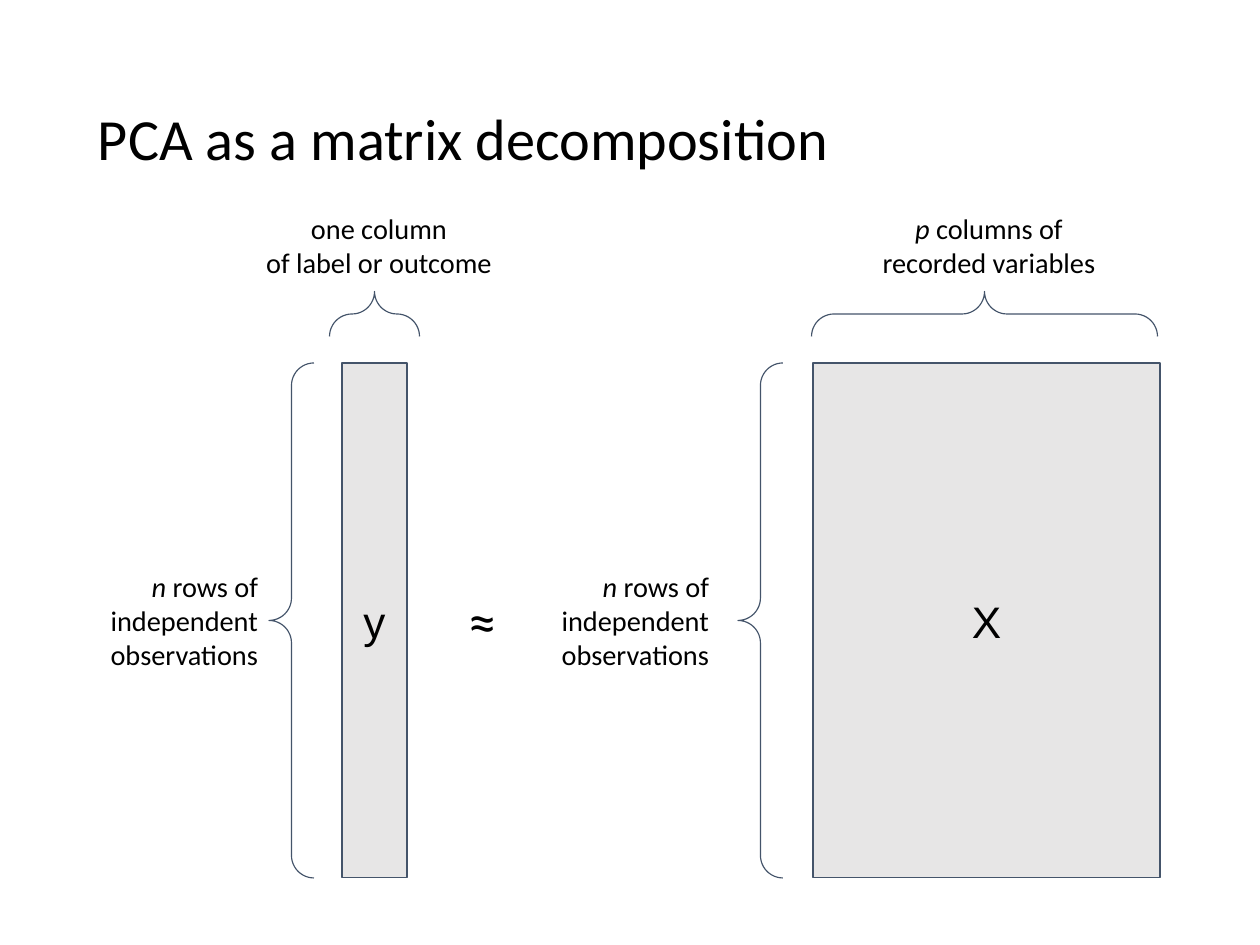
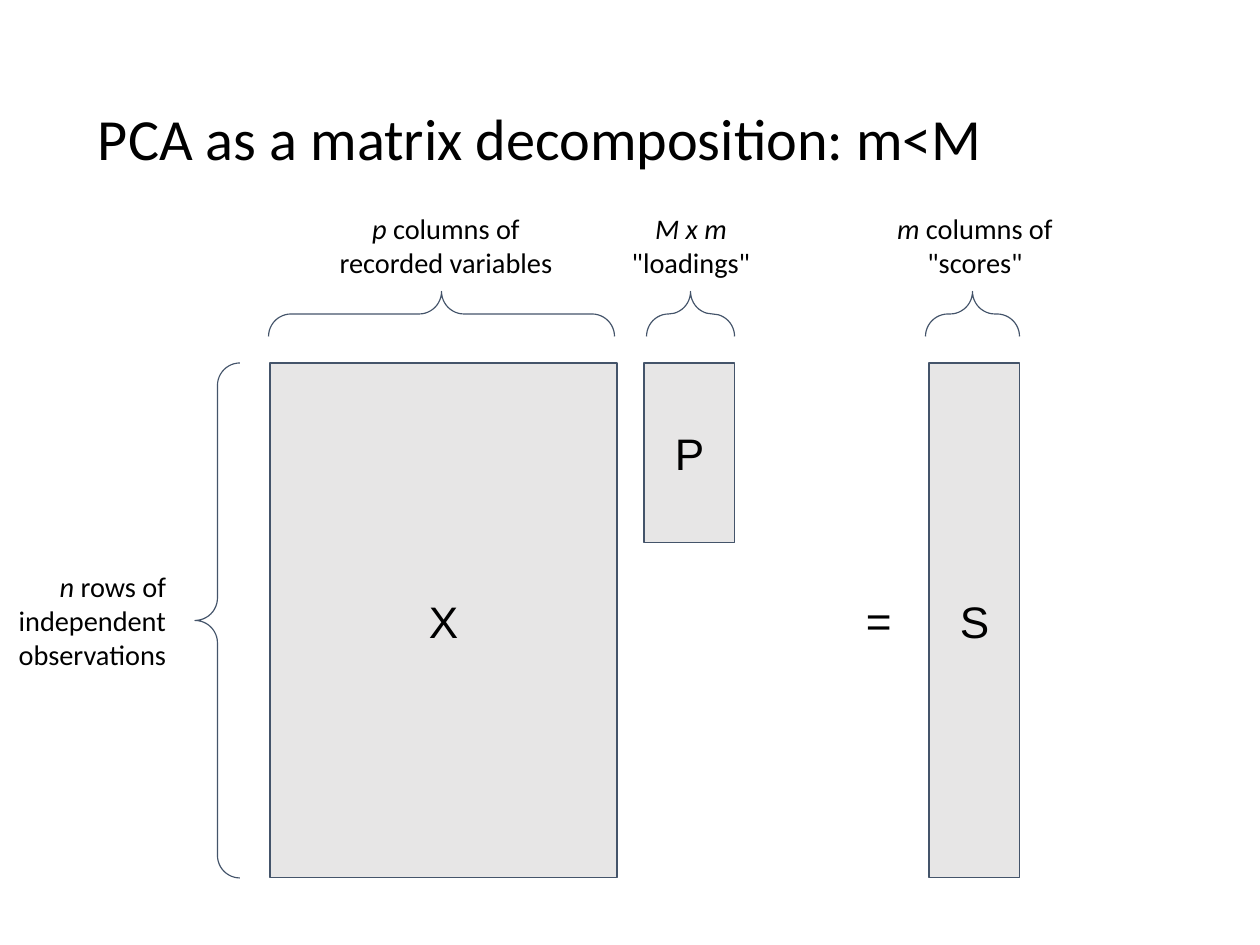
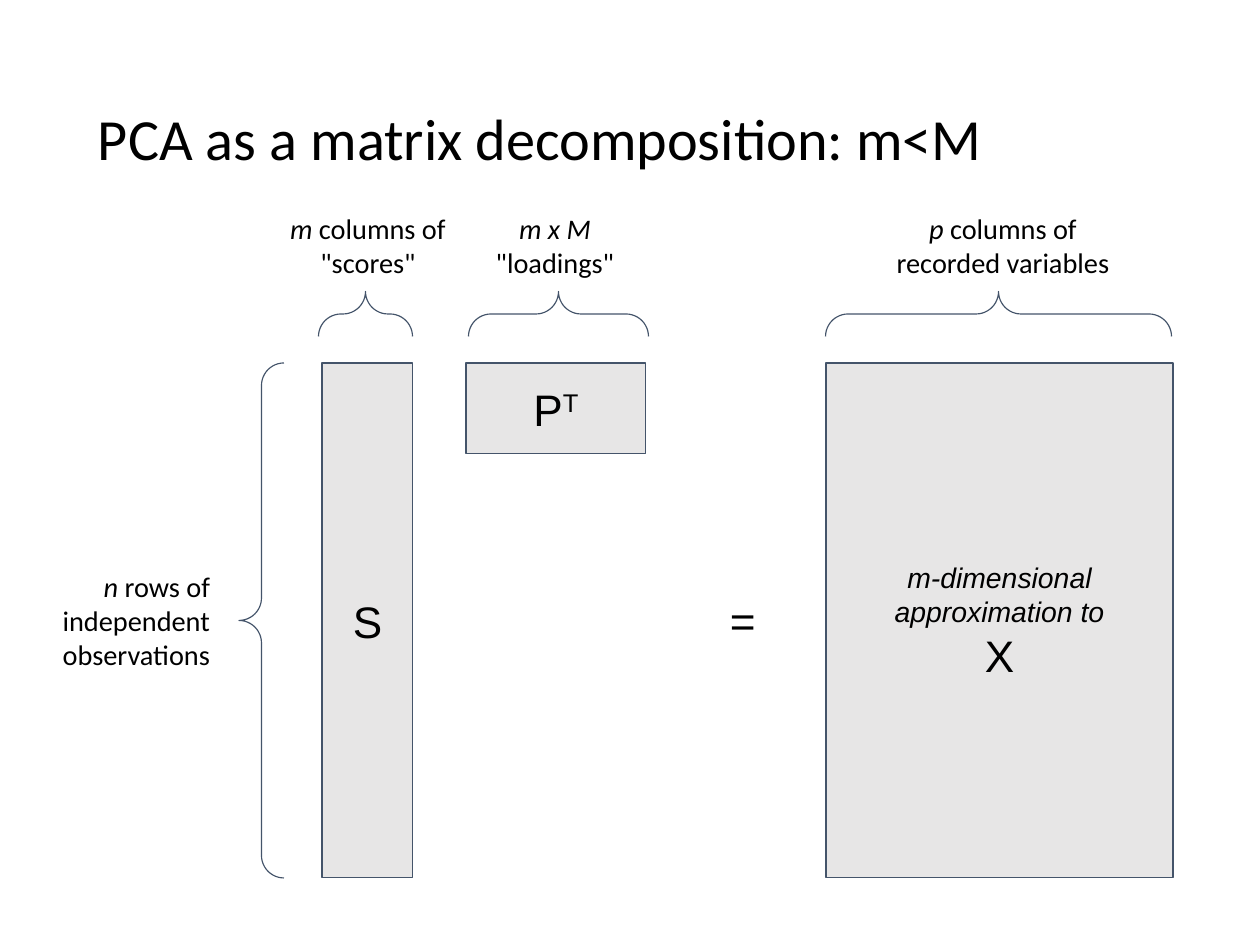
"""Build three slides that show PCA as a matrix decomposition."""
from collections import namedtuple

from pptx import Presentation
from pptx.dml.color import RGBColor
from pptx.enum.shapes import MSO_SHAPE as Shape
from pptx.enum.text import MSO_ANCHOR as Anchor, MSO_AUTO_SIZE as AutoSize, PP_ALIGN as Align
from pptx.util import Pt

PX = 8064
BLACK = RGBColor(0x00, 0x00, 0x00)
GREY = RGBColor(0xE7, 0xE6, 0xE6)
SLATE = RGBColor(0x44, 0x54, 0x6A)

INSET = 11
MATRIX_TOP, ROWS, VARIABLES = 363, 515, 347
SCORES, LOADINGS = 91, 180
BRACE_DEPTH, COLUMN_BRACE_TOP = 45, 291

Run = namedtuple("Run", "text size italic raised", defaults=(18, False, False))
Matrix = namedtuple("Matrix", "left width height lines")
RowNote = namedtuple("RowNote", "left brace_left")
ColumnNote = namedtuple("ColumnNote", "left brace_left brace_width lines")
Relation = namedtuple("Relation", "left top width height run font align wrap inset_y")
Page = namedtuple("Page", "title matrices row_notes column_notes relations")


def write(frame, lines, font, align, inset_x=INSET, inset_y=INSET):
    frame.margin_left = frame.margin_right = inset_x * PX
    frame.margin_top = frame.margin_bottom = inset_y * PX
    for number, line in enumerate(lines):
        paragraph = frame.add_paragraph() if number else frame.paragraphs[0]
        paragraph.alignment = align
        for part in line:
            run = paragraph.add_run()
            run.text = part.text
            run.font.name = font
            run.font.size = Pt(part.size)
            run.font.italic = part.italic
            run.font.color.rgb = BLACK
            if part.raised:
                run._r.get_or_add_rPr().set("baseline", "30000")


def add_outlined(slide, kind, left, top, width, height):
    outlined = slide.shapes.add_shape(kind, left * PX, top * PX, width * PX, height * PX)
    outlined.shadow.inherit = False
    outlined.line.color.rgb = SLATE
    outlined.line.width = Pt(0.75)
    if kind == Shape.LEFT_BRACE:
        outlined.fill.background()
        outlined.adjustments[0] = outlined.adjustments[1] = 0.5
    else:
        outlined.fill.solid()
        outlined.fill.fore_color.rgb = GREY
    return outlined


row_lines = [[Run("n", italic=True), Run(" rows of")], [Run("independent observations")]]
variable_lines = [[Run("p", italic=True), Run(" columns of")], [Run("recorded variables")]]
score_lines = [[Run("m", italic=True), Run(" columns of")], [Run('"scores"')]]
outcome_lines = [[Run("one column")], [Run("of label or outcome")]]
tall_loading_lines = [[Run("M x m", italic=True)], [Run('"loadings"')]]
wide_loading_lines = [[Run("m x M", italic=True)], [Run('"loadings"')]]

x_lines = [[Run("X", 28)]]
s_lines = [[Run("S", 28)]]
approximation_lines = [
    [Run("m-dimensional", italic=True)],
    [Run("approximation to", italic=True)],
    [Run("X", 28)],
]
transposed_lines = [[Run("P", 28), Run("T", 28, raised=True)]]

approximates = Relation(424, 575, 118, 92, Run("≈", 36), "Calibri", Align.CENTER, True, INSET)
equals = Relation(855, 587, 49, 65, Run("=", 28), "Arial", Align.LEFT, False, 6)

pages = [
    Page(
        "PCA as a matrix decomposition",
        [Matrix(813, VARIABLES, ROWS, x_lines), Matrix(342, 65, ROWS, [[Run("y", 28)]])],
        [RowNote(542, 738), RowNote(91, 269)],
        [ColumnNote(849, 812, 346, variable_lines), ColumnNote(239, 330, 90, outcome_lines)],
        [approximates],
    ),
    Page(
        "PCA as a matrix decomposition: m<M",
        [
            Matrix(270, VARIABLES, ROWS, x_lines),
            Matrix(644, SCORES, LOADINGS, [[Run("P", 28)]]),
            Matrix(929, SCORES, ROWS, s_lines),
        ],
        [RowNote(-1, 195)],
        [
            ColumnNote(306, 269, 346, variable_lines),
            ColumnNote(551, 647, 88, tall_loading_lines),
            ColumnNote(835, 926, 94, score_lines),
        ],
        [equals],
    ),
    Page(
        "PCA as a matrix decomposition: m<M",
        [
            Matrix(322, SCORES, ROWS, s_lines),
            Matrix(466, LOADINGS, SCORES, transposed_lines),
            Matrix(826, VARIABLES, ROWS, approximation_lines),
        ],
        [RowNote(43, 239)],
        [
            ColumnNote(228, 319, 94, score_lines),
            ColumnNote(415, 469, 180, wide_loading_lines),
            ColumnNote(863, 826, 346, variable_lines),
        ],
        [equals._replace(left=719)],
    ),
]

deck = Presentation()
deck.slide_width, deck.slide_height = 1260 * PX, 945 * PX

for page in pages:
    slide = deck.slides.add_slide(deck.slide_layouts[6])

    heading = slide.shapes.add_textbox(86 * PX, 50 * PX, 1086 * PX, 183 * PX).text_frame
    heading.word_wrap = True
    heading.vertical_anchor = Anchor.MIDDLE
    write(heading, [[Run(page.title, 37)]], "Calibri", Align.LEFT, 12, 12)
    heading.paragraphs[0].line_spacing = 0.9

    for matrix in page.matrices:
        block = add_outlined(
            slide, Shape.RECTANGLE, matrix.left, MATRIX_TOP, matrix.width, matrix.height
        )
        block.text_frame.vertical_anchor = Anchor.MIDDLE
        write(block.text_frame, matrix.lines, "Arial", Align.CENTER)

    for note in page.row_notes:
        add_outlined(slide, Shape.LEFT_BRACE, note.brace_left, MATRIX_TOP, BRACE_DEPTH, ROWS)
        label = slide.shapes.add_textbox(note.left * PX, 558 * PX, 178 * PX, 125 * PX).text_frame
        label.word_wrap = True
        label.auto_size = AutoSize.SHAPE_TO_FIT_TEXT
        write(label, row_lines, "Calibri", Align.RIGHT)

    for note in page.column_notes:
        turn = (note.brace_width - BRACE_DEPTH) // 2
        brace = add_outlined(
            slide,
            Shape.LEFT_BRACE,
            note.brace_left + turn,
            COLUMN_BRACE_TOP - turn,
            BRACE_DEPTH,
            note.brace_width,
        )
        brace.rotation = 90
        label = slide.shapes.add_textbox(note.left * PX, 200 * PX, 280 * PX, 92 * PX).text_frame
        label.word_wrap = True
        label.auto_size = AutoSize.SHAPE_TO_FIT_TEXT
        write(label, note.lines, "Calibri", Align.CENTER)

    for relation in page.relations:
        sign = slide.shapes.add_textbox(
            relation.left * PX, relation.top * PX, relation.width * PX, relation.height * PX
        ).text_frame
        sign.word_wrap = relation.wrap
        sign.auto_size = AutoSize.SHAPE_TO_FIT_TEXT
        write(sign, [[relation.run]], relation.font, relation.align, inset_y=relation.inset_y)

deck.save("out.pptx")
